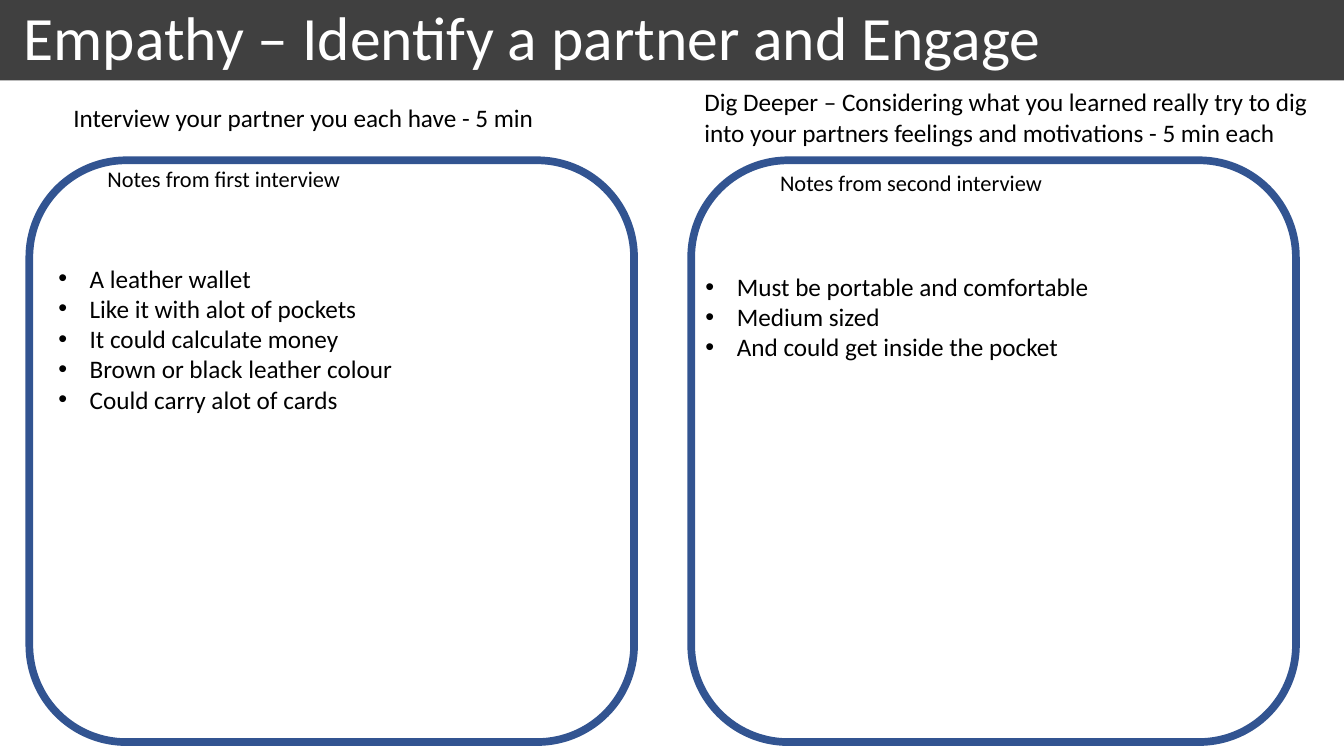
from dataclasses import dataclass

import pptx
import pptx.dml.color
import pptx.enum.shapes
import pptx.enum.text
import pptx.oxml
import pptx.oxml.ns
import pptx.shapes.autoshape
import pptx.slide
import pptx.util
from pptx.util import Cm

FONT = "Calibri"
BLACK = pptx.dml.color.RGBColor(0x00, 0x00, 0x00)
WHITE = pptx.dml.color.RGBColor(0xFF, 0xFF, 0xFF)
DARK_GREY = pptx.dml.color.RGBColor(0x40, 0x40, 0x40)
BLUE = pptx.dml.color.RGBColor(0x32, 0x54, 0x91)

SLIDE_WIDTH, SLIDE_HEIGHT = 33.87, 19.05
BAR_HEIGHT = 2.03
FRAME_TOP, FRAME_WIDTH, FRAME_HEIGHT = 4.04, 15.24, 14.66
BULLET_INDENT = Cm(0.79)


@dataclass(frozen=True)
class TextBlock:
    """Lines of text in a box; lengths in centimetres, size in points."""
    left: float
    top: float
    width: float
    height: float
    lines: tuple[str, ...]
    size: int = 18
    bulleted: bool = False


@dataclass(frozen=True)
class InterviewPanel:
    """One interview: its rounded frame and the texts around and inside it."""
    frame_left: float
    instruction: TextBlock
    label: TextBlock
    notes: TextBlock


PANELS = (
    InterviewPanel(
        frame_left=0.74,
        instruction=TextBlock(1.6, 2.46, 14.76, 1.02,
                              ("Interview your partner you each have - 5 min",)),
        label=TextBlock(2.46, 4.04, 8.59, 0.94, ("Notes from first interview",), size=16),
        notes=TextBlock(1.22, 6.5, 10.8, 4.11, (
            "A leather wallet",
            "Like it with alot of pockets",
            "It could calculate money",
            "Brown or black leather colour",
            "Could carry alot of cards",
        ), bulleted=True),
    ),
    InterviewPanel(
        frame_left=17.42,
        instruction=TextBlock(17.5, 2.06, 15.95, 1.8, (
            "Dig Deeper – Considering what you learned really try to dig "
            "into your partners feelings and motivations - 5 min each",)),
        label=TextBlock(19.41, 4.14, 8.59, 0.94, ("Notes from second interview",), size=16),
        notes=TextBlock(17.53, 6.71, 13.23, 2.57, (
            "Must be portable and comfortable",
            "Medium sized",
            "And could get inside the pocket",
        ), bulleted=True),
    ),
)


def add_bullet(paragraph) -> None:
    properties = paragraph._p.get_or_add_pPr()
    properties.set("marL", str(BULLET_INDENT))
    properties.set("indent", str(-BULLET_INDENT))
    namespace = pptx.oxml.ns.nsdecls("a")
    properties.append(pptx.oxml.parse_xml(f'<a:buFont {namespace} typeface="Arial"/>'))
    properties.append(pptx.oxml.parse_xml(f'<a:buChar {namespace} char="•"/>'))


def add_text(slide: pptx.slide.Slide, block: TextBlock,
             color: pptx.dml.color.RGBColor = BLACK) -> pptx.shapes.autoshape.Shape:
    shape = slide.shapes.add_textbox(
        Cm(block.left), Cm(block.top), Cm(block.width), Cm(block.height))
    frame = shape.text_frame
    frame.word_wrap = True
    frame.auto_size = pptx.enum.text.MSO_AUTO_SIZE.SHAPE_TO_FIT_TEXT
    frame.text = "\n".join(block.lines)
    for paragraph in frame.paragraphs:
        if block.bulleted:
            add_bullet(paragraph)
        paragraph.font.name = FONT
        paragraph.font.size = pptx.util.Pt(block.size)
        paragraph.font.color.rgb = color
    return shape


def add_title(slide: pptx.slide.Slide) -> None:
    bar = slide.shapes.add_shape(
        pptx.enum.shapes.MSO_SHAPE.RECTANGLE, 0, 0, Cm(SLIDE_WIDTH), Cm(BAR_HEIGHT))
    bar.shadow.inherit = False
    bar.fill.solid()
    bar.fill.fore_color.rgb = DARK_GREY
    bar.line.fill.background()

    title = add_text(slide, TextBlock(
        0, 0, SLIDE_WIDTH, BAR_HEIGHT,
        ("Empathy – Identify a partner and Engage",), size=44), WHITE)
    frame = title.text_frame
    frame.auto_size = pptx.enum.text.MSO_AUTO_SIZE.NONE
    frame.vertical_anchor = pptx.enum.text.MSO_ANCHOR.MIDDLE
    frame.margin_left = Cm(0.6)
    frame.paragraphs[0].line_spacing = 0.9


def add_panel(slide: pptx.slide.Slide, panel: InterviewPanel) -> None:
    frame = slide.shapes.add_shape(
        pptx.enum.shapes.MSO_SHAPE.ROUNDED_RECTANGLE,
        Cm(panel.frame_left), Cm(FRAME_TOP), Cm(FRAME_WIDTH), Cm(FRAME_HEIGHT))
    frame.shadow.inherit = False
    frame.fill.background()
    frame.line.color.rgb = BLUE
    frame.line.width = pptx.util.Pt(5.5)
    for block in (panel.instruction, panel.label, panel.notes):
        add_text(slide, block)


def main() -> None:
    presentation = pptx.Presentation()
    presentation.slide_width = Cm(SLIDE_WIDTH)
    presentation.slide_height = Cm(SLIDE_HEIGHT)
    slide = presentation.slides.add_slide(presentation.slide_layouts[6])

    # Title bar
    add_title(slide)

    # Interview panels
    for panel in PANELS:
        add_panel(slide, panel)

    presentation.save("out.pptx")


if __name__ == "__main__":
    main()
